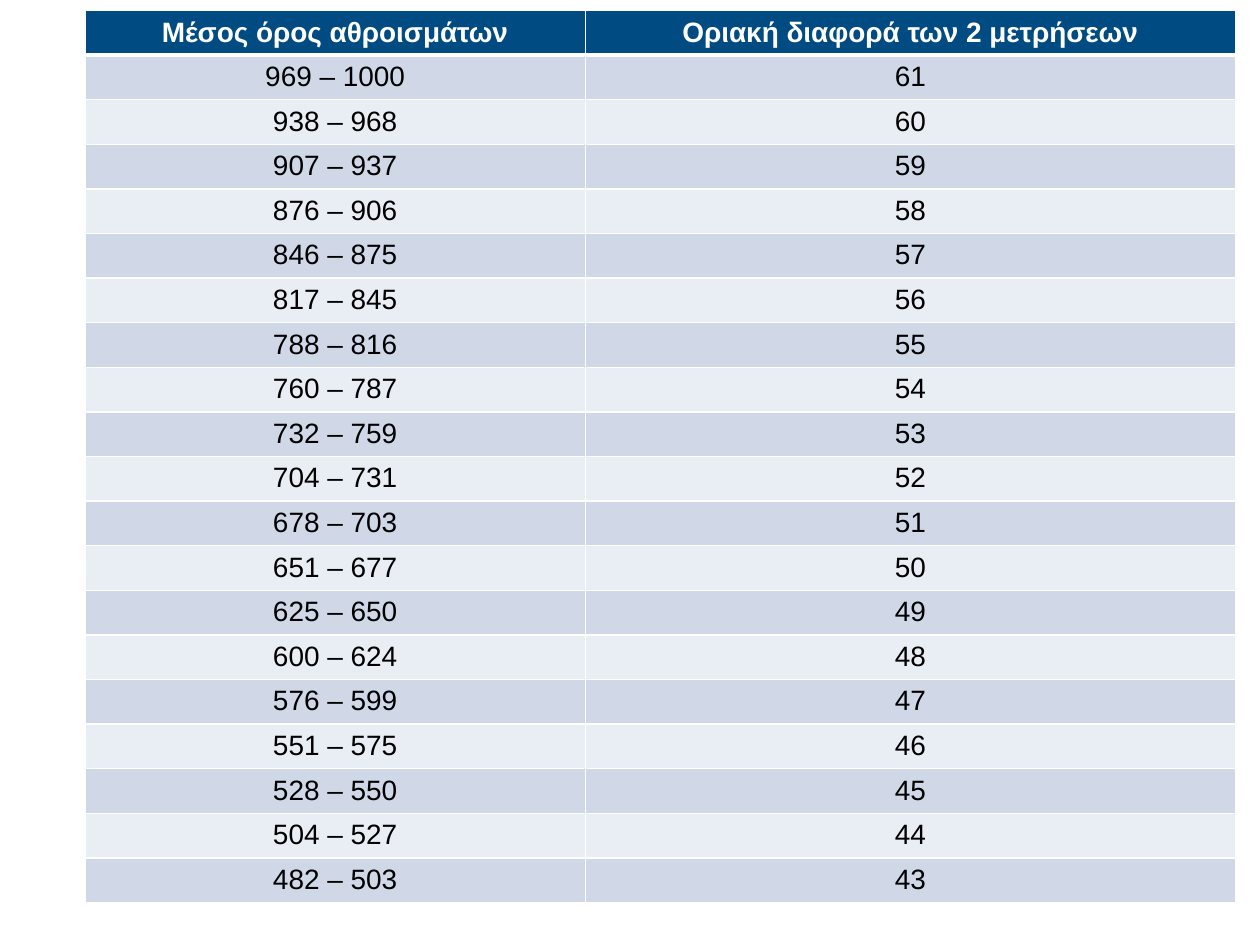
from dataclasses import dataclass

from lxml import etree
from pptx import Presentation
from pptx.dml.color import RGBColor
from pptx.enum import text
from pptx.oxml import ns
from pptx.util import Pt


@dataclass(frozen=True)
class Theme:
    font: str = "Arial"
    size: float = 16
    header_fill: str = "004B82"
    header_text: str = "FFFFFF"
    body_text: str = "000000"
    bands: tuple = ("D0D8E8", "E9EDF4")
    border: str = "FFFFFF"
    thin: float = 1
    thick: float = 3


THEME = Theme()
HEADERS = ("Μέσος όρος αθροισμάτων", "Οριακή διαφορά των 2 μετρήσεων")
LOWER_BOUNDS = (969, 938, 907, 876, 846, 817, 788, 760, 732, 704,
                678, 651, 625, 600, 576, 551, 528, 504, 482)
HIGHEST_MEAN = 1000
HIGHEST_LIMIT = 61


def limit_rows():
    """Each range ends just below the one before; its limit is one lower."""
    upper = HIGHEST_MEAN
    for index, lower in enumerate(LOWER_BOUNDS):
        yield f"{lower} – {upper}", str(HIGHEST_LIMIT - index)
        upper = lower - 1


def set_border(cell, side, width):
    line = etree.SubElement(cell._tc.get_or_add_tcPr(), ns.qn(f"a:ln{side}"),
                            w=str(Pt(width)))
    fill = etree.SubElement(line, ns.qn("a:solidFill"))
    etree.SubElement(fill, ns.qn("a:srgbClr"), val=THEME.border)


def format_cell(cell, value, row):
    header = row == 0
    # Borders must precede the fill in the cell properties.
    for side in "LRTB":
        next_to_header = (row, side) in ((0, "B"), (1, "T"))
        set_border(cell, side, THEME.thick if next_to_header else THEME.thin)
    fill = THEME.header_fill if header else THEME.bands[(row - 1) % 2]
    cell.fill.solid()
    cell.fill.fore_color.rgb = RGBColor.from_string(fill)
    cell.vertical_anchor = (text.MSO_ANCHOR.MIDDLE if header
                            else text.MSO_ANCHOR.TOP)
    cell.text = value
    paragraph = cell.text_frame.paragraphs[0]
    paragraph.alignment = text.PP_ALIGN.CENTER
    font = paragraph.runs[0].font
    for name, setting in {"name": THEME.font, "size": Pt(THEME.size),
                          "bold": header}.items():
        setattr(font, name, setting)
    font.color.rgb = RGBColor.from_string(
        THEME.header_text if header else THEME.body_text)


def add_limits_table(slide, left, top, column_widths, row_height):
    rows = [HEADERS, *limit_rows()]
    table = slide.shapes.add_table(
        len(rows), len(HEADERS), Pt(left), Pt(top),
        Pt(sum(column_widths)), Pt(row_height * len(rows))).table
    for column, width in zip(table.columns, column_widths):
        column.width = Pt(width)
    for row, values in enumerate(rows):
        for column, value in enumerate(values):
            format_cell(table.cell(row, column), value, row)


def main():
    presentation = Presentation()
    presentation.slide_width, presentation.slide_height = Pt(720), Pt(540)
    slide = presentation.slides.add_slide(presentation.slide_layouts[6])
    add_limits_table(slide, left=48.5, top=6, column_widths=(286, 371.5),
                     row_height=25.5)
    presentation.save("out.pptx")


if __name__ == "__main__":
    main()
